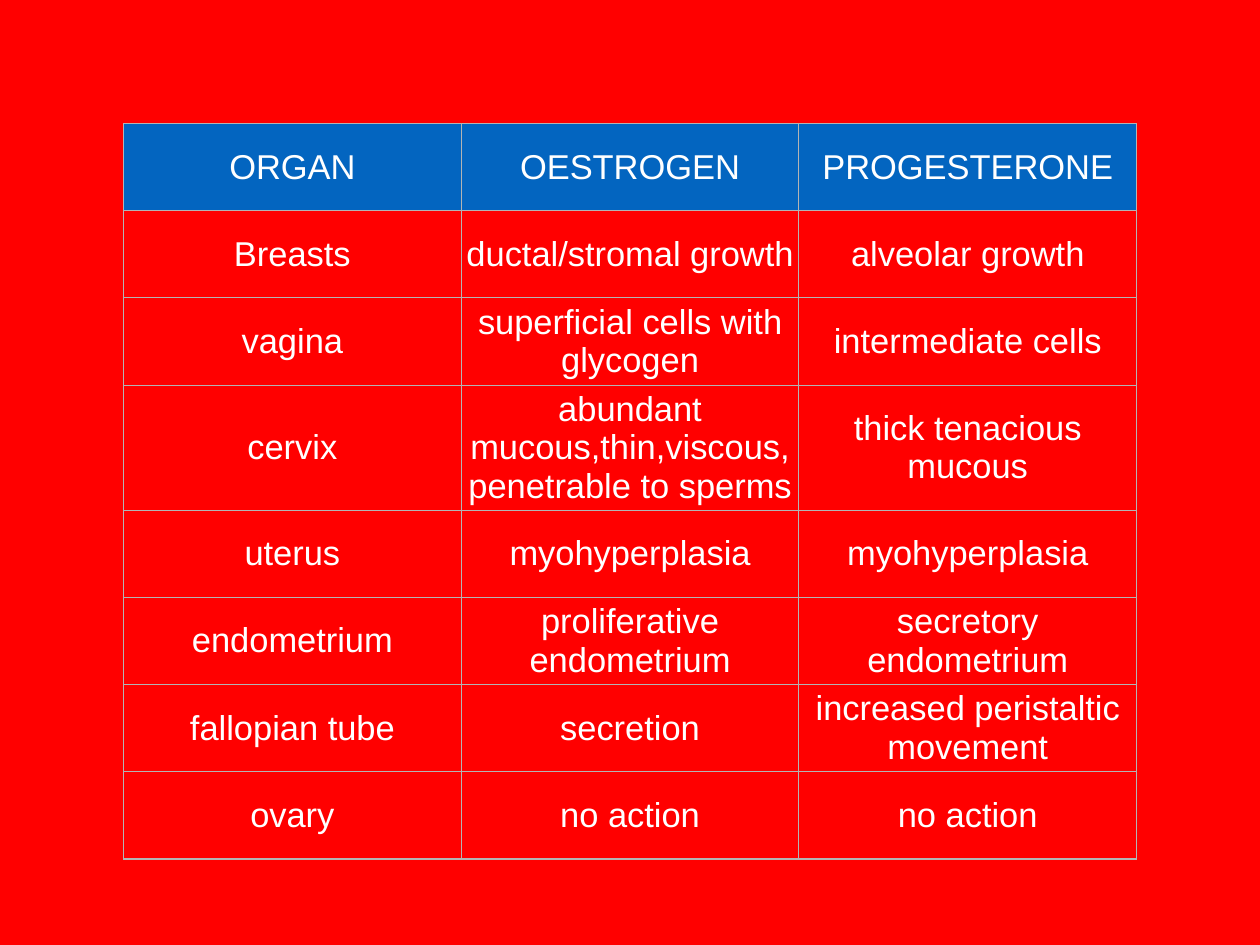
from lxml.etree import SubElement
from pptx import Presentation
from pptx.dml.color import RGBColor
from pptx.enum.text import MSO_ANCHOR, PP_ALIGN
from pptx.oxml.ns import qn
from pptx.util import Cm, Pt

THEME = {
    "background": RGBColor.from_string("FF0000"),
    "header": RGBColor.from_string("0365C0"),
    "text": RGBColor.from_string("FFFFFF"),
    "border": "B4B4B4",
    "border_width": Pt(1),
    "font": "Arial",
    "size": Pt(28),
}

HORMONE_ACTIONS = [
    ("ORGAN", "OESTROGEN", "PROGESTERONE"),
    ("Breasts", "ductal/stromal growth", "alveolar growth"),
    ("vagina", "superficial cells with glycogen", "intermediate cells"),
    ("cervix", "abundant mucous,thin,viscous,penetrable to sperms", "thick tenacious mucous"),
    ("uterus", "myohyperplasia", "myohyperplasia"),
    ("endometrium", "proliferative endometrium", "secretory endometrium"),
    ("fallopian tube", "secretion", "increased peristaltic movement"),
    ("ovary", "no action", "no action"),
]
COLUMN_WIDTH = Cm(9.68)
ROW_HEIGHT = Cm(2.5)
CELL_MARGIN = Cm(0.14)


def add_borders(cell):
    properties = cell._tc.get_or_add_tcPr()
    for side in ("lnL", "lnR", "lnT", "lnB"):
        line = SubElement(properties, qn(f"a:{side}"), w=str(THEME["border_width"]))
        solid = SubElement(line, qn("a:solidFill"))
        SubElement(solid, qn("a:srgbClr"), val=THEME["border"])


presentation = Presentation()
presentation.slide_width = Cm(36.12)
presentation.slide_height = Cm(27.09)
slide = presentation.slides.add_slide(presentation.slide_layouts[6])
slide.background.fill.solid()
slide.background.fill.fore_color.rgb = THEME["background"]

row_count, column_count = len(HORMONE_ACTIONS), len(HORMONE_ACTIONS[0])
hormones = slide.shapes.add_table(
    row_count, column_count, Cm(3.54), Cm(3.54),
    COLUMN_WIDTH * column_count, ROW_HEIGHT * row_count,
).table
hormones.first_row = False
hormones.horz_banding = False
for column in hormones.columns:
    column.width = COLUMN_WIDTH

for row_index, entries in enumerate(HORMONE_ACTIONS):
    hormones.rows[row_index].height = ROW_HEIGHT
    for column_index, entry in enumerate(entries):
        cell = hormones.cell(row_index, column_index)
        cell.vertical_anchor = MSO_ANCHOR.MIDDLE
        cell.margin_left = cell.margin_right = CELL_MARGIN
        cell.margin_top = cell.margin_bottom = CELL_MARGIN
        add_borders(cell)
        if row_index == 0:
            cell.fill.solid()
            cell.fill.fore_color.rgb = THEME["header"]
        else:
            cell.fill.background()
        paragraph = cell.text_frame.paragraphs[0]
        paragraph.alignment = PP_ALIGN.CENTER
        run = paragraph.add_run()
        run.text = entry
        run.font.name = THEME["font"]
        run.font.size = THEME["size"]
        run.font.bold = False
        run.font.color.rgb = THEME["text"]

presentation.save("out.pptx")
